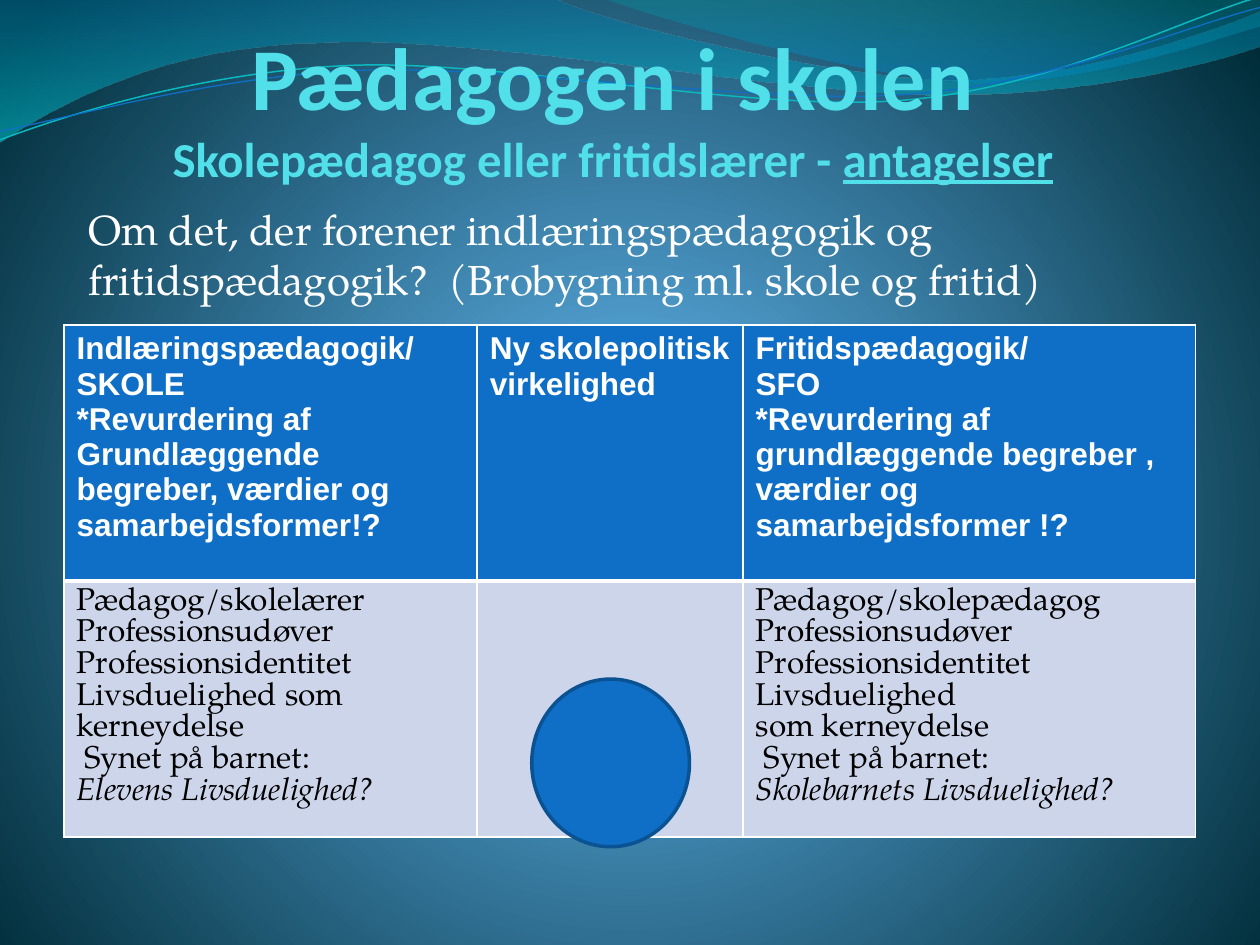
"""Build the slide about pedagogues in school, with a comparison table on a wave background."""
from dataclasses import dataclass
from typing import Optional

from pptx import Presentation
from pptx.dml.color import RGBColor
from pptx.enum.shapes import MSO_SHAPE
from pptx.enum.text import MSO_ANCHOR, MSO_AUTO_SIZE, PP_ALIGN
from pptx.oxml import parse_xml
from pptx.oxml.ns import nsdecls
from pptx.util import Cm, Pt

WHITE = RGBColor(0xFF, 0xFF, 0xFF)
BLACK = RGBColor(0x00, 0x00, 0x00)
BLUE = RGBColor(0x0F, 0x6F, 0xC6)
DARK_BLUE = RGBColor(0x0B, 0x52, 0x92)
PALE_BLUE = RGBColor(0xCC, 0xD5, 0xEA)
TITLE_CYAN = RGBColor(0x51, 0xE0, 0xEA)
LINE_TEAL = RGBColor(0x0A, 0xB8, 0xBF)
SKY = RGBColor(0x4A, 0xA0, 0xD6)
MID_SKY = RGBColor(0x4C, 0x98, 0xC7)
DEEP_SEA = RGBColor(0x00, 0x2C, 0x38)
OCEAN = RGBColor(0x00, 0x74, 0xA1)
TURQUOISE = RGBColor(0x00, 0xC6, 0xCF)
SEA_GREEN = RGBColor(0x00, 0xA1, 0xA9)
AZURE = RGBColor(0x00, 0x8B, 0xBF)

SERIF = "TeX Gyre Pagella"
LINEAR = '<a:lin ang="5400000" scaled="1"/>'
RADIAL = ('<a:path path="circle">'
          '<a:fillToRect l="10000" t="110000" r="10000" b="100000"/></a:path>')


@dataclass
class Stop:
    """A gradient stop, with position and opacity in percent."""
    position: int
    color: RGBColor
    opacity: int = 100


@dataclass
class Wave:
    """An outline in centimetres: pairs are straight segments, sextuples are Bezier curves."""
    start: tuple
    segments: list
    stops: Optional[list] = None
    line_color: Optional[RGBColor] = None
    line_width: float = 0


@dataclass
class CellStyle:
    """The look of one table row."""
    fill: RGBColor
    font: dict
    bottom_border: float


WAVES = [
    Wave((0, -0.03), [
        (11.18, -0.03),
        (12.09, 0.43, 16.87, 1.6, 19.25, 1.6),
        (21.67, 1.6, 24.33, 0.66, 25.4, 0.23),
        (25.43, 0.91),
        (24.97, 1.12, 22.1, 1.93, 18.95, 1.91),
        (15.8, 1.91, 9.7, 0.71, 6.53, 0.86),
        (3.28, 0.89, 1.17, 2.11, -0.03, 2.87),
    ], stops=[Stop(0, OCEAN, 45), Stop(100, TURQUOISE, 55)]),
    Wave((12.17, -0.03), [
        (12.93, 0.28, 17.32, 1.57, 19.53, 1.65),
        (21.74, 1.75, 24.41, 0.81, 25.4, 0.53),
        (25.4, 0),
    ], stops=[Stop(0, SEA_GREEN, 30), Stop(80, AZURE, 45)]),
    Wave((0, 2.82), [
        (1.22, 2.36, 4.01, 1.45, 7.04, 1.32),
        (10.03, 1.19, 15.06, 2.26, 18.11, 2.03),
        (21.16, 1.8, 23.83, 0.38, 25.35, -0.05),
    ], line_color=LINE_TEAL, line_width=0.85),
    Wave((0, 2.64), [
        (1.19, 2.44, 4.17, 1.55, 7.19, 1.42),
        (10.24, 1.3, 15.16, 2.11, 18.21, 1.91),
        (21.23, 1.7, 23.9, 0.53, 25.4, 0.15),
    ], line_color=BLUE, line_width=0.75),
]

HEADER_STYLE = CellStyle(
    BLUE, {"name": "Arial", "size": Pt(18), "bold": True, "color": WHITE}, 3)
BODY_STYLE = CellStyle(
    PALE_BLUE, {"name": SERIF, "size": Pt(18), "bold": False, "color": BLACK}, 1)

COLUMN_WIDTHS = [8.33, 5.36, 9.12]
ROW_HEIGHT = 5.16
PROFESSION = ["Professionsudøver", "Professionsidentitet"]
CHILD_VIEW = " Synet på barnet:"
ROWS = [
    (HEADER_STYLE, [
        ["Indlæringspædagogik/", "SKOLE", "*Revurdering af",
         "Grundlæggende begreber, værdier og samarbejdsformer!?"],
        ["Ny skolepolitisk virkelighed"],
        ["Fritidspædagogik/", "SFO", "*Revurdering af grundlæggende begreber , værdier og",
         "samarbejdsformer !?"],
    ]),
    (BODY_STYLE, [
        ["Pædagog/skolelærer", *PROFESSION, "Livsduelighed som kerneydelse",
         CHILD_VIEW, "Elevens Livsduelighed?"],
        [],
        ["Pædagog/skolepædagog", *PROFESSION, "Livsduelighed", "som kerneydelse",
         CHILD_VIEW, "Skolebarnets Livsduelighed?"],
    ]),
]


def apply_format(target, values: dict) -> None:
    """Set each named attribute; a colour goes to the font colour."""
    for name, value in values.items():
        if name == "color":
            target.color.rgb = value
        else:
            setattr(target, name, value)


def set_gradient(owner, element, stops: list, direction: str) -> None:
    """Give an owner a gradient fill with its own stops and direction."""
    owner.fill.gradient()
    gradient = element.xpath(".//a:gradFill")[0]
    stop_xml = "".join(
        f'<a:gs pos="{stop.position * 1000}"><a:srgbClr val="{stop.color}">'
        f'<a:alpha val="{stop.opacity * 1000}"/></a:srgbClr></a:gs>' for stop in stops)
    gradient.getparent().replace(gradient, parse_xml(
        f'<a:gradFill {nsdecls("a")} rotWithShape="1">'
        f'<a:gsLst>{stop_xml}</a:gsLst>{direction}</a:gradFill>'))


def bend_segments(shape, segments: list) -> None:
    """Replace the straight segments of a freeform by Bezier curves where six values are given."""
    for line, segment in zip(shape.element.xpath(".//a:lnTo"), segments):
        if len(segment) == 6:
            points = "".join(
                f'<a:pt x="{Cm(x) - shape.left}" y="{Cm(y) - shape.top}"/>'
                for x, y in zip(segment[::2], segment[1::2]))
            line.getparent().replace(line, parse_xml(
                f'<a:cubicBezTo {nsdecls("a")}>{points}</a:cubicBezTo>'))


def draw_wave(slide, wave: Wave) -> None:
    """Draw one filled wave or one wavy line."""
    builder = slide.shapes.build_freeform(Cm(wave.start[0]), Cm(wave.start[1]))
    corners = [(Cm(segment[-2]), Cm(segment[-1])) for segment in wave.segments]
    builder.add_line_segments(corners, close=wave.stops is not None)
    shape = builder.convert_to_shape()
    bend_segments(shape, wave.segments)
    shape.shadow.inherit = False
    if wave.stops:
        set_gradient(shape, shape.element, wave.stops, LINEAR)
        shape.line.fill.background()
    else:
        shape.fill.background()
        shape.line.color.rgb = wave.line_color
        shape.line.width = Pt(wave.line_width)


def place_text(shape, box: dict, frame: dict) -> None:
    """Move a placeholder and format its text frame."""
    apply_format(shape, box)
    apply_format(shape.text_frame, {"word_wrap": True, "auto_size": MSO_AUTO_SIZE.NONE,
                                    "margin_left": 0, "margin_right": Cm(0.05), **frame})


def add_run(paragraph, text: str, **font) -> None:
    """Append a formatted run."""
    run = paragraph.add_run()
    run.text = text
    apply_format(run.font, font)


def fill_cell(cell, lines: list, style: CellStyle) -> None:
    """Write, fill and border a table cell."""
    for index, line in enumerate(lines):
        paragraph = cell.text_frame.paragraphs[0] if index == 0 else cell.text_frame.add_paragraph()
        italic = style is BODY_STYLE and index == len(lines) - 1
        add_run(paragraph, line, **style.font, italic=italic)
    cell.fill.solid()
    cell.fill.fore_color.rgb = style.fill
    properties = cell._tc.get_or_add_tcPr()
    for index, side in enumerate("LRTB"):
        width = Pt(style.bottom_border if side == "B" else 1)
        properties.insert(index, parse_xml(
            f'<a:ln{side} {nsdecls("a")} w="{width}"><a:solidFill>'
            f'<a:srgbClr val="{WHITE}"/></a:solidFill></a:ln{side}>'))


def main() -> None:
    """Build and save the slide."""
    presentation = Presentation()
    presentation.slide_width, presentation.slide_height = Cm(25.4), Cm(19.05)
    slide = presentation.slides.add_slide(presentation.slide_layouts[0])
    set_gradient(slide.background, slide.element,
                 [Stop(0, SKY), Stop(25, MID_SKY), Stop(100, DEEP_SEA)], RADIAL)
    title, subtitle = slide.placeholders
    for wave in WAVES:
        draw_wave(slide, wave)
    for placeholder in (title, subtitle):
        slide.shapes.element.append(placeholder.element)

    place_text(title, {"left": Cm(1.47), "top": Cm(0.59), "width": Cm(21.82), "height": Cm(3.18)},
               {"vertical_anchor": MSO_ANCHOR.BOTTOM, "margin_top": 0, "margin_bottom": 0})
    heading = title.text_frame.paragraphs[0]
    heading.alignment = PP_ALIGN.CENTER
    heading_font = {"name": "Calibri", "bold": True, "color": TITLE_CYAN}
    add_run(heading, "Pædagogen i skolen", size=Pt(50.4), **heading_font)
    heading.add_line_break()
    add_run(heading, "Skolepædagog eller fritidslærer - ", size=Pt(27.9), **heading_font)
    add_run(heading, "antagelser", size=Pt(27.9), underline=True, **heading_font)

    place_text(subtitle, {"left": Cm(1.78), "top": Cm(3.97), "width": Cm(21.82), "height": Cm(13.89)},
               {"vertical_anchor": MSO_ANCHOR.TOP, "margin_top": Cm(0.13), "margin_bottom": Cm(0.13)})
    question = subtitle.text_frame.paragraphs[0]
    apply_format(question, {"alignment": PP_ALIGN.LEFT, "space_before": Pt(4.8)})
    add_run(question, "Om det, der forener indlæringspædagogik og fritidspædagogik?  "
            "(Brobygning ml. skole og fritid)", name=SERIF, size=Pt(24), color=WHITE)

    table = slide.shapes.add_table(len(ROWS), len(COLUMN_WIDTHS), Cm(1.29), Cm(6.55),
                                   Cm(sum(COLUMN_WIDTHS)), Cm(ROW_HEIGHT * len(ROWS))).table
    table.horz_banding = False
    for column, width in zip(table.columns, COLUMN_WIDTHS):
        column.width = Cm(width)
    for row, (style, texts) in zip(table.rows, ROWS):
        row.height = Cm(ROW_HEIGHT)
        for cell, lines in zip(row.cells, texts):
            fill_cell(cell, lines, style)

    circle = slide.shapes.add_shape(MSO_SHAPE.OVAL, Cm(10.72), Cm(13.69), Cm(3.18), Cm(3.38))
    circle.shadow.inherit = False
    circle.fill.solid()
    circle.fill.fore_color.rgb = BLUE
    circle.line.color.rgb = DARK_BLUE
    circle.line.width = Pt(2)
    presentation.save("out.pptx")


if __name__ == "__main__":
    main()
